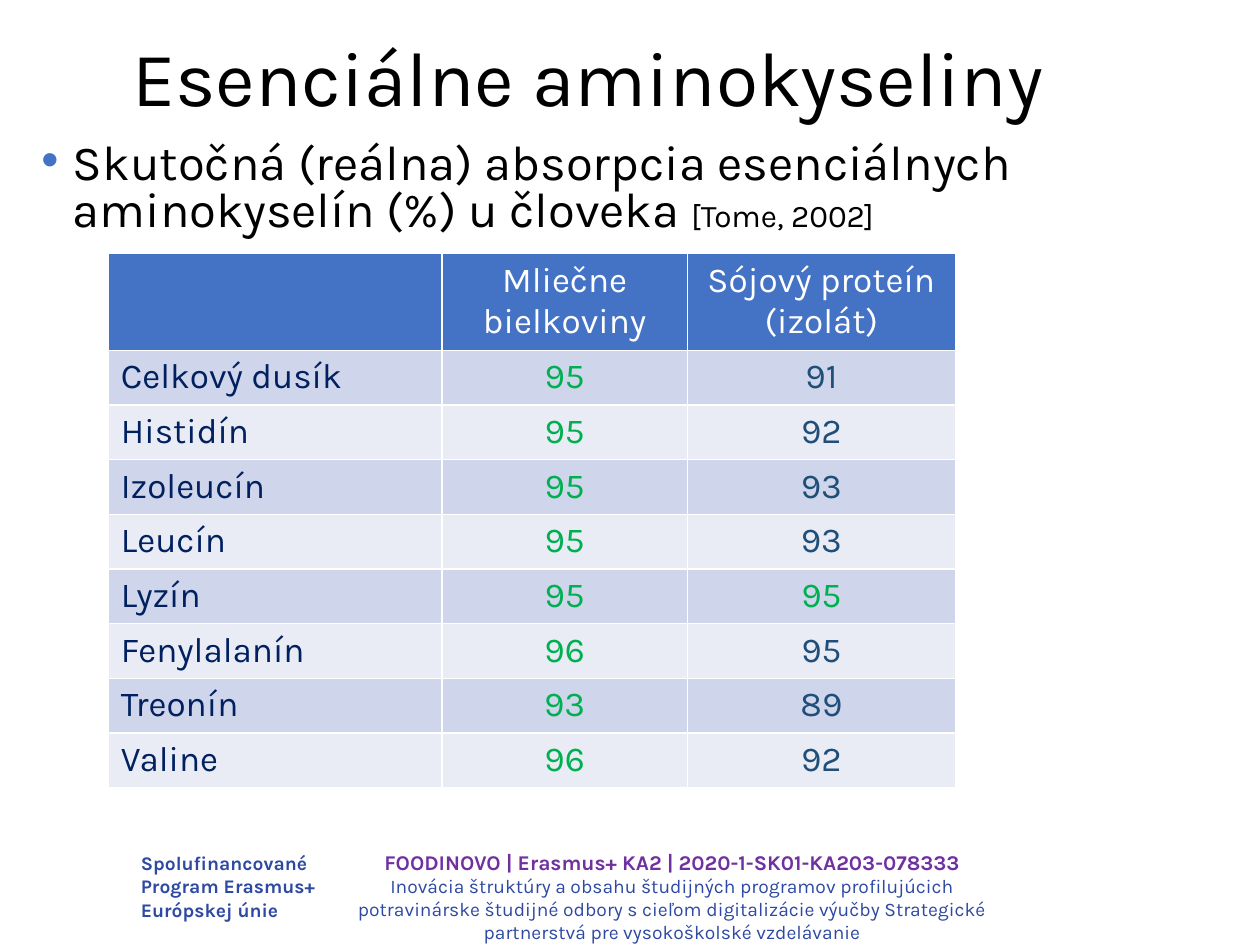
import pptx
import pptx.dml.color
import pptx.enum.text
import pptx.oxml
import pptx.util
from pptx.oxml.ns import nsdecls

Pt = pptx.util.Pt
ALIGN = pptx.enum.text.PP_ALIGN
ANCHOR = pptx.enum.text.MSO_ANCHOR

BLACK, WHITE, BLUE, NAVY = "000000", "FFFFFF", "4472C4", "002060"
GREEN, STEEL, VIOLET, INK = "00B050", "1F4E79", "7030A0", "2D49A3"
BANDS = ("CFD5EA", "E9EBF5")


def color(text):
    return pptx.dml.color.RGBColor.from_string(text)


class Deck:
    font = "Karla"

    def __init__(self, wide, high):
        self.prs = pptx.Presentation()
        self.prs.slide_width, self.prs.slide_height = Pt(wide), Pt(high)
        self.slide = self.prs.slides.add_slide(self.prs.slide_layouts[6])

    def run(self, para, text, size, tint, bold=False):
        run = para.add_run()
        run.text = text
        run.font.name, run.font.size, run.font.bold = self.font, Pt(size), bold
        run.font.color.rgb = color(tint)

    def text(self, box, paras, align=ALIGN.LEFT, anchor=ANCHOR.TOP, space=None):
        """Each paragraph is a list of (text, size, colour, bold) runs."""
        frame = self.slide.shapes.add_textbox(*map(Pt, box)).text_frame
        frame.word_wrap = True
        frame.vertical_anchor = anchor
        for i, runs in enumerate(paras):
            para = frame.paragraphs[0] if i == 0 else frame.add_paragraph()
            para.alignment = align
            para.line_spacing = space
            for run in runs:
                self.run(para, *run)
        return frame

    def bullet(self, para, tint, indent):
        props = para._p.get_or_add_pPr()
        props.set("marL", str(Pt(indent)))
        props.set("indent", str(-Pt(indent)))
        for xml in (
            f'<a:buClr {nsdecls("a")}><a:srgbClr val="{tint}"/></a:buClr>',
            f'<a:buFont {nsdecls("a")} typeface="Arial"/>',
            f'<a:buChar {nsdecls("a")} char="•"/>',
        ):
            props.append(pptx.oxml.parse_xml(xml))

    def cell(self, cell, text, fill, tint, align):
        props = cell._tc.get_or_add_tcPr()
        for side in "LRTB":
            props.append(pptx.oxml.parse_xml(
                f'<a:ln{side} {nsdecls("a")} w="{Pt(1)}"><a:solidFill>'
                f'<a:srgbClr val="{WHITE}"/></a:solidFill></a:ln{side}>'))
        cell.fill.solid()
        cell.fill.fore_color.rgb = color(fill)
        para = cell.text_frame.paragraphs[0]
        para.alignment = align
        if text:
            self.run(para, text, 20, tint)

    def table(self, left, top, cols, head, rows, tall, row_h):
        high = tall + row_h * len(rows)
        table = self.slide.shapes.add_table(
            len(rows) + 1, len(cols), *map(Pt, (left, top, sum(cols), high))).table
        for col, wide in zip(table.columns, cols):
            col.width = Pt(wide)
        for i, row in enumerate(table.rows):
            row.height = Pt(row_h if i else tall)
        for j, text in enumerate(head):
            self.cell(table.cell(0, j), text, BLUE, WHITE, ALIGN.CENTER)
        for i, (name, milk, soy) in enumerate(rows):
            # Soy is green only for lysine, where it equals milk
            tints = (NAVY, GREEN, GREEN if soy == milk else STEEL)
            for j, text in enumerate((name, str(milk), str(soy))):
                self.cell(table.cell(i + 1, j), text, BANDS[i % 2], tints[j],
                          ALIGN.CENTER if j else ALIGN.LEFT)


def main():
    deck = Deck(720, 540)

    # Footer
    deck.text((185.8, 481.7, 396.7, 48.2), [
        [("FOODINOVO | Erasmus+ KA2 | 2020-1-SK01-KA203-078333", 12, VIOLET, True)],
        [("Inovácia štruktúry a obsahu študijných programov profilujúcich "
          "potravinárske študijné odbory s cieľom digitalizácie výučby "
          "Strategické partnerstvá pre vysokoškolské vzdelávanie", 11, INK)],
    ], ALIGN.CENTER)
    lines = ("Spolufinancované", "Program Erasmus+", "Európskej únie")
    deck.text((73.4, 483.1, 146.9, 47.5),
              [[(line, 11, INK, True)] for line in lines])

    # Title and lead
    deck.text((68.4, -5.8, 620.6, 104.4),
              [[("Esenciálne aminokyseliny", 44, BLACK)]],
              anchor=ANCHOR.MIDDLE, space=0.9)
    lead = deck.text((16.6, 77.8, 642.2, 66.2), [[
        ("Skutočná (reálna) absorpcia esenciálnych aminokyselín (%) u človeka ",
         28, BLACK),
        ("[Tome, 2002]", 18, BLACK),
    ]], space=0.8)
    deck.bullet(lead.paragraphs[0], BLUE, 18)

    # Absorption table
    deck.table(61.9, 144.9, (190.6, 140.4, 153),
               ("", "Mliečne bielkoviny", "Sójový proteín (izolát)"),
               [("Celkový dusík", 95, 91), ("Histidín", 95, 92),
                ("Izoleucín", 95, 93), ("Leucín", 95, 93), ("Lyzín", 95, 95),
                ("Fenylalanín", 96, 95), ("Treonín", 93, 89), ("Valine", 96, 92)],
               53.8, 30.6)

    deck.prs.save("out.pptx")


if __name__ == "__main__":
    main()
